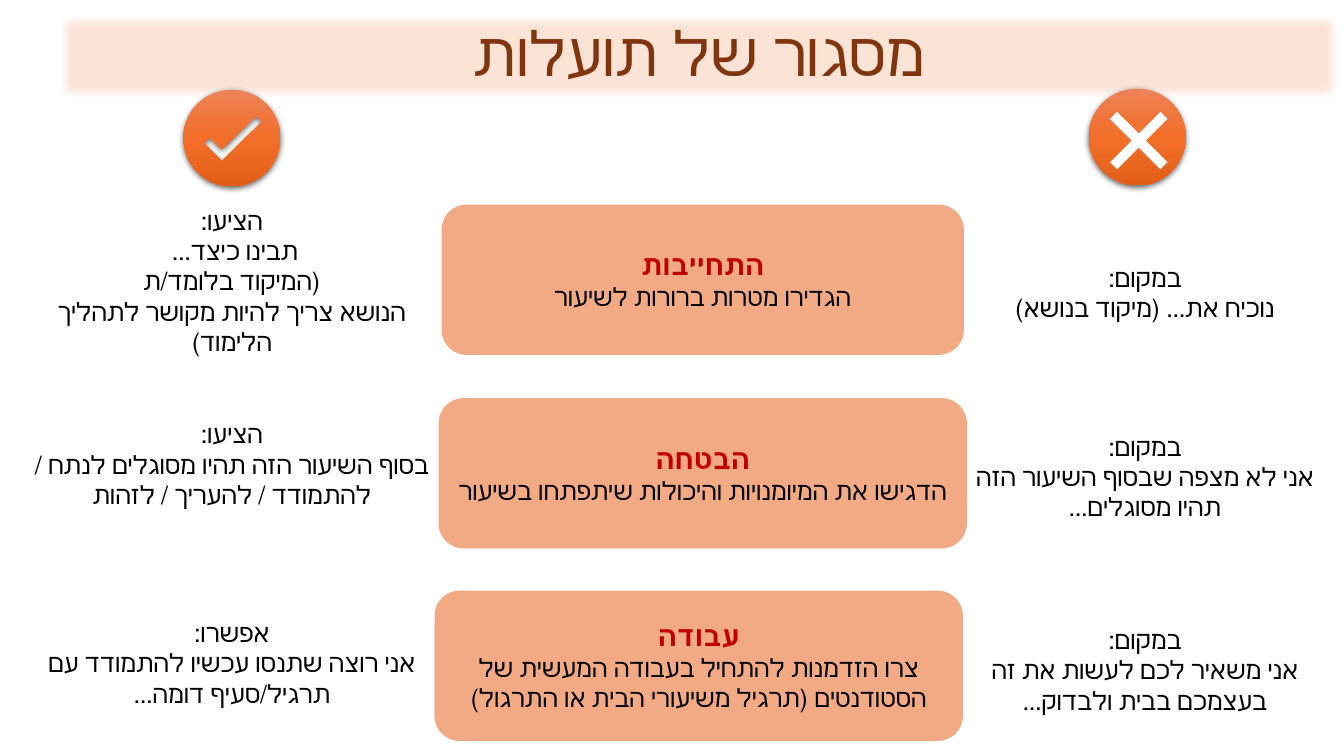
from pptx import Presentation
from pptx.dml.color import RGBColor
from pptx.enum.shapes import MSO_SHAPE as SHAPE
from pptx.enum.text import MSO_ANCHOR as ANCHOR, PP_ALIGN as ALIGN
from pptx.oxml import parse_xml
from pptx.oxml.ns import nsdecls, qn
from pptx.util import Inches, Pt

PEACH = RGBColor(0xFB, 0xE3, 0xD6)
BROWN = RGBColor(0x80, 0x35, 0x0E)
SALMON = RGBColor(0xF2, 0xAA, 0x84)
RED = RGBColor(0xC0, 0x00, 0x00)
BLACK = RGBColor(0x00, 0x00, 0x00)
WHITE = RGBColor(0xFF, 0xFF, 0xFF)
BADGE_STOPS = [(0, RGBColor(0xED, 0x82, 0x57)),
               (50, RGBColor(0xF2, 0x6E, 0x29)),
               (100, RGBColor(0xE2, 0x5F, 0x1A))]

ROW_H = 1.49
BADGE = 0.96
ARC = 0.55  # Bezier handle length of a quarter circle, in radii
INSTEAD = "במקום:"

# Each row: card box (left, top, width), heading and text, then top and lines
# of the "instead" text, and top, extra bottom inset and lines of the "offer" text
ROWS = [
    ((4.38, 2.03, 5.18), "התחייבות", "הגדירו מטרות ברורות לשיעור",
     2.16, [INSTEAD, "נוכיח את... (מיקוד בנושא)"],
     2.19, 0.3, ["הציעו:", "תבינו כיצד... \v(המיקוד בלומד/ת\v"
                 "הנושא צריך להיות מקושר לתהליך הלימוד)"]),
    ((4.35, 3.95, 5.24), "הבטחה", "הדגישו את המיומנויות והיכולות שיתפתחו בשיעור",
     3.98, [INSTEAD, "אני לא מצפה שבסוף השיעור הזה תהיו מסוגלים..."],
     3.86, 0, ["הציעו:", "בסוף השיעור הזה תהיו מסוגלים לנתח / להתמודד / להעריך / לזהות"]),
    ((4.31, 5.86, 5.24), "עבודה",
     "צרו הזדמנות להתחיל בעבודה המעשית של הסטודנטים (תרגיל משיעורי הבית או התרגול)",
     5.9, [INSTEAD, "אני משאיר לכם לעשות את זה בעצמכם בבית ולבדוק..."],
     5.83, 0, ["אפשרו:", "אני רוצה שתנסו עכשיו להתמודד עם תרגיל/סעיף דומה..."]),
]


def format_rtl(p, font, size, color):
    """Centre a right-to-left paragraph and set its font."""
    p.alignment = ALIGN.CENTER
    p.font.size = Pt(size)
    p.font.color.rgb = color
    p.font.name = font
    p._p.get_or_add_pPr().set("rtl", "1")


def add_effect(sp, xml):
    sp.shadow.inherit = False
    sp.element.spPr.find(qn("a:effectLst")).append(parse_xml(xml))


def add_title(slide, left, top, width, height):
    sp = slide.shapes.title
    sp.left, sp.top, sp.width, sp.height = map(Inches, (left, top, width, height))
    sp.fill.solid()
    sp.fill.fore_color.rgb = PEACH
    add_effect(sp, f'<a:softEdge {nsdecls("a")} rad="{Pt(5)}"/>')
    tf = sp.text_frame
    tf.text = "מסגור של תועלות"
    tf.vertical_anchor = ANCHOR.MIDDLE
    p = tf.paragraphs[0]
    p.line_spacing = 0.9
    format_rtl(p, "Calibri", 44, BROWN)


def add_round_box(slide, left, top, width):
    sp = slide.shapes.add_shape(SHAPE.ROUNDED_RECTANGLE, Inches(left), Inches(top),
                                Inches(width), Inches(ROW_H))
    sp.shadow.inherit = False
    sp.fill.background()
    sp.line.fill.background()
    sp.text_frame.word_wrap = True
    sp.text_frame.vertical_anchor = ANCHOR.MIDDLE
    return sp


def add_card(slide, left, top, width, heading, text):
    sp = add_round_box(slide, left, top, width)
    sp.fill.solid()
    sp.fill.fore_color.rgb = SALMON
    p = sp.text_frame.paragraphs[0]
    format_rtl(p, "Cabin", 18, BLACK)
    r = p.add_run()
    r.text = heading
    r.font.size = Pt(20)
    r.font.bold = True
    r.font.color.rgb = RED
    p.add_line_break()
    p.add_run().text = text


def add_side_text(slide, left, top, width, lines, extra_inset=0):
    tf = add_round_box(slide, left, top, width).text_frame
    tf.margin_bottom = Inches(0.05 + extra_inset)
    tf.text = "\n".join(lines)
    for p in tf.paragraphs:
        format_rtl(p, "Cabin", 18, BLACK)


def style_badge(sp):
    """Give a badge its vertical gradient and soft drop shadow."""
    sp.line.fill.background()
    stops = "".join(f'<a:gs pos="{pos * 1000}"><a:srgbClr val="{color}"/></a:gs>'
                    for pos, color in BADGE_STOPS)
    sp.element.spPr.find(qn("a:ln")).addprevious(parse_xml(
        f'<a:gradFill {nsdecls("a")}><a:gsLst>{stops}</a:gsLst>'
        '<a:lin ang="5400000" scaled="0"/></a:gradFill>'))
    add_effect(sp, f'<a:outerShdw {nsdecls("a")} blurRad="{Pt(4.5)}" dist="{Pt(1.5)}" '
                   'dir="5400000" algn="ctr" rotWithShape="0"><a:srgbClr val="000000">'
                   '<a:alpha val="63000"/></a:srgbClr></a:outerShdw>')


def add_outline(slide, left, top, *contours):
    """Draw closed contours, given in inches from left and top, as one shape."""
    builder = None
    for contour in contours:
        points = [(Inches(left + x), Inches(top + y)) for x, y in contour]
        if builder is None:
            builder = slide.shapes.build_freeform(*points[0])
        else:
            builder.move_to(*points[0])
        builder.add_line_segments(points[1:], close=True)
    return builder.convert_to_shape()


def round_quarters(sp, corners, radius):
    """Turn the first lines of a freeform, between corners, into quarter circles."""
    lines = list(sp.element.iter(qn("a:lnTo")))
    for line, (x0, y0), (x1, y1) in zip(lines, corners, corners[1:]):
        handles = [(x0 + ARC * (x1 - radius), y0 + ARC * (y1 - radius)),
                   (x1 + ARC * (x0 - radius), y1 + ARC * (y0 - radius)), (x1, y1)]
        pts = "".join(f'<a:pt x="{Inches(x)}" y="{Inches(y)}"/>' for x, y in handles)
        line.getparent().replace(line, parse_xml(
            f'<a:cubicBezTo {nsdecls("a")}>{pts}</a:cubicBezTo>'))


def add_check_badge(slide, left, top):
    mid = BADGE / 2
    corners = [(mid, 0), (0, mid), (mid, BADGE), (BADGE, mid), (mid, 0)]
    tick = [(0.2, 0.53), (0.26, 0.47), (0.38, 0.59), (0.71, 0.27),
            (0.72, 0.26), (0.78, 0.32), (0.38, 0.71)]
    sp = add_outline(slide, left, top, corners, tick)
    round_quarters(sp, corners, mid)
    style_badge(sp)


def add_cross_badge(slide, left, top):
    disc = slide.shapes.add_shape(SHAPE.OVAL, Inches(left), Inches(top),
                                  Inches(BADGE), Inches(BADGE))
    style_badge(disc)
    size, arm = 0.57, 0.07
    mid = size / 2
    far, gap = size - arm, mid - arm
    cross = [(size, arm), (far, 0), (mid, gap), (arm, 0), (0, arm), (gap, mid),
             (0, far), (arm, size), (mid, size - gap), (far, size),
             (size, far), (size - gap, mid)]
    sp = add_outline(slide, left + 0.21, top + 0.23, cross)
    sp.shadow.inherit = False
    sp.fill.solid()
    sp.fill.fore_color.rgb = WHITE
    sp.line.fill.background()


def main():
    prs = Presentation()
    prs.slide_width, prs.slide_height = Inches(13.33), Inches(7.5)
    slide = prs.slides.add_slide(prs.slide_layouts[5])
    add_title(slide, 0.6, 0.15, 12.67, 0.82)
    for card, heading, text, instead_top, instead, offer_top, inset, offer in ROWS:
        add_card(slide, *card, heading, text)
        add_side_text(slide, 9.47, instead_top, 3.77, instead)
        add_side_text(slide, 0.03, offer_top, 4.54, offer, inset)
    add_check_badge(slide, 1.82, 0.89)
    add_cross_badge(slide, 10.8, 0.88)
    prs.save("out.pptx")


if __name__ == "__main__":
    main()
